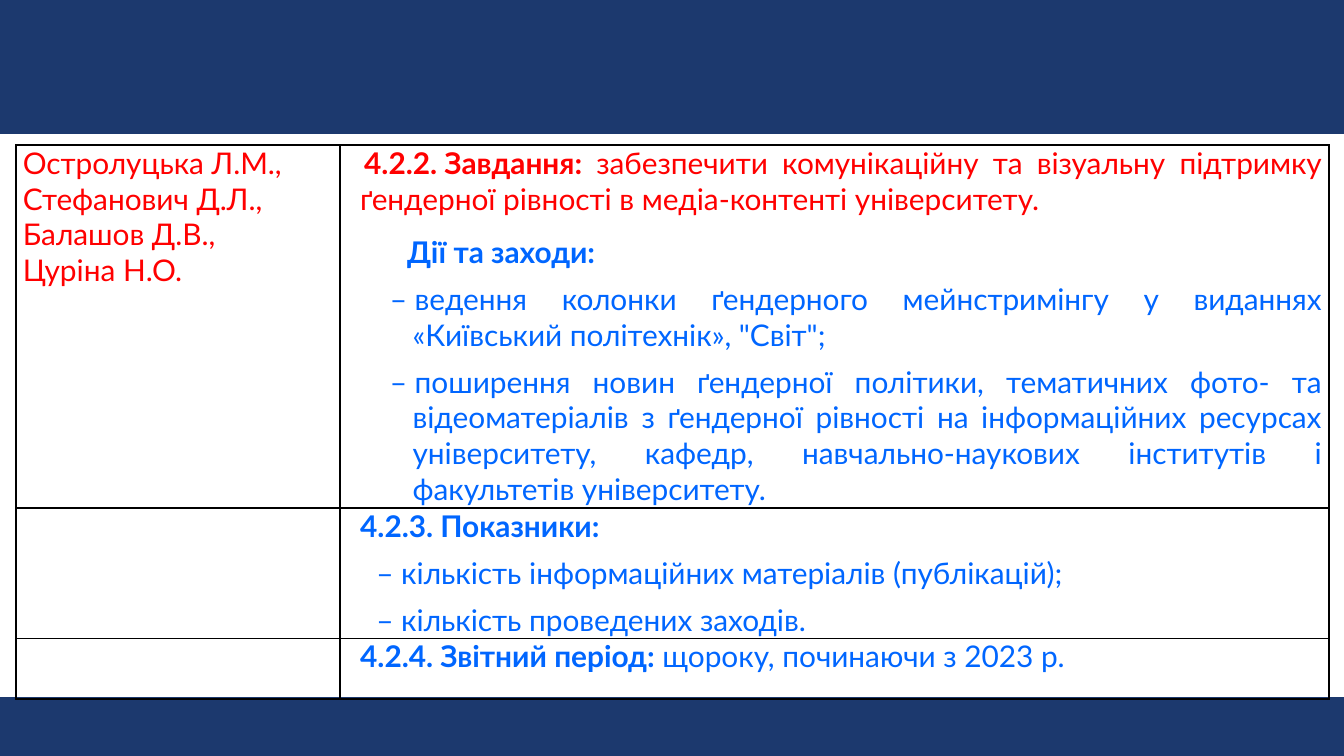
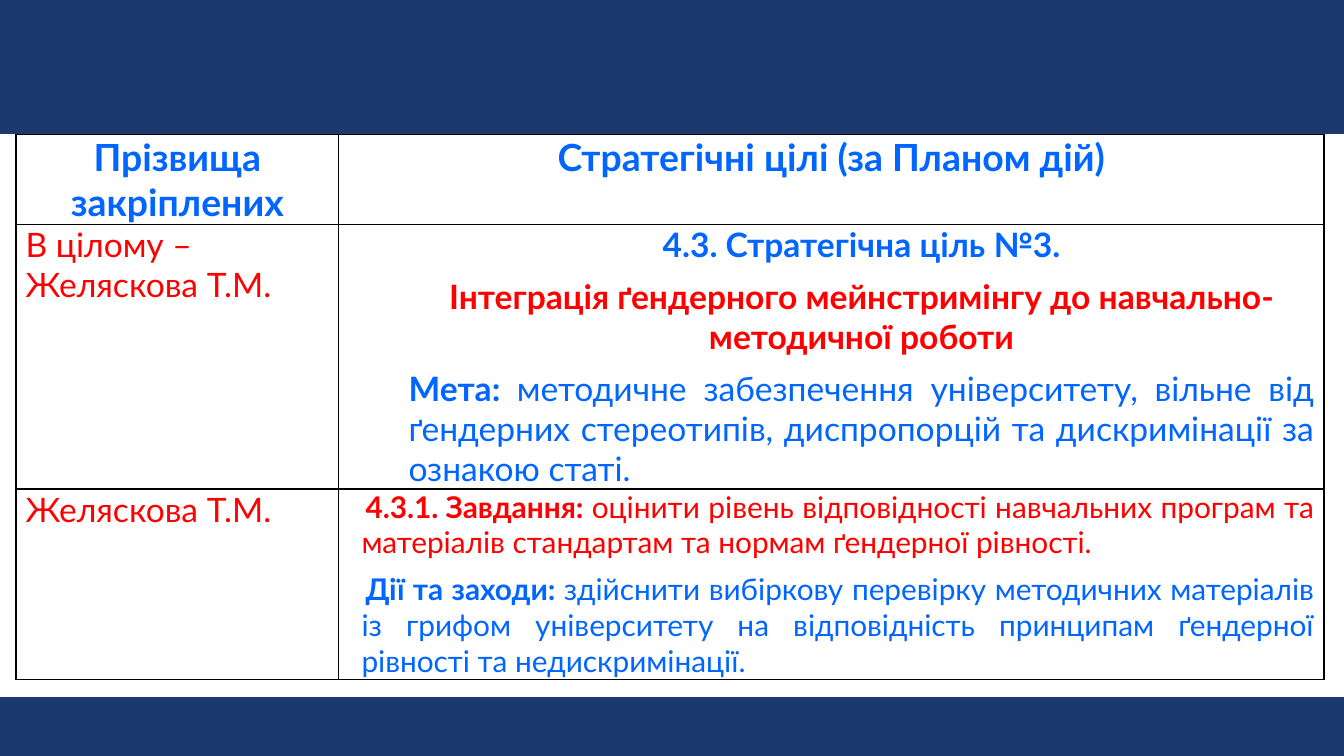
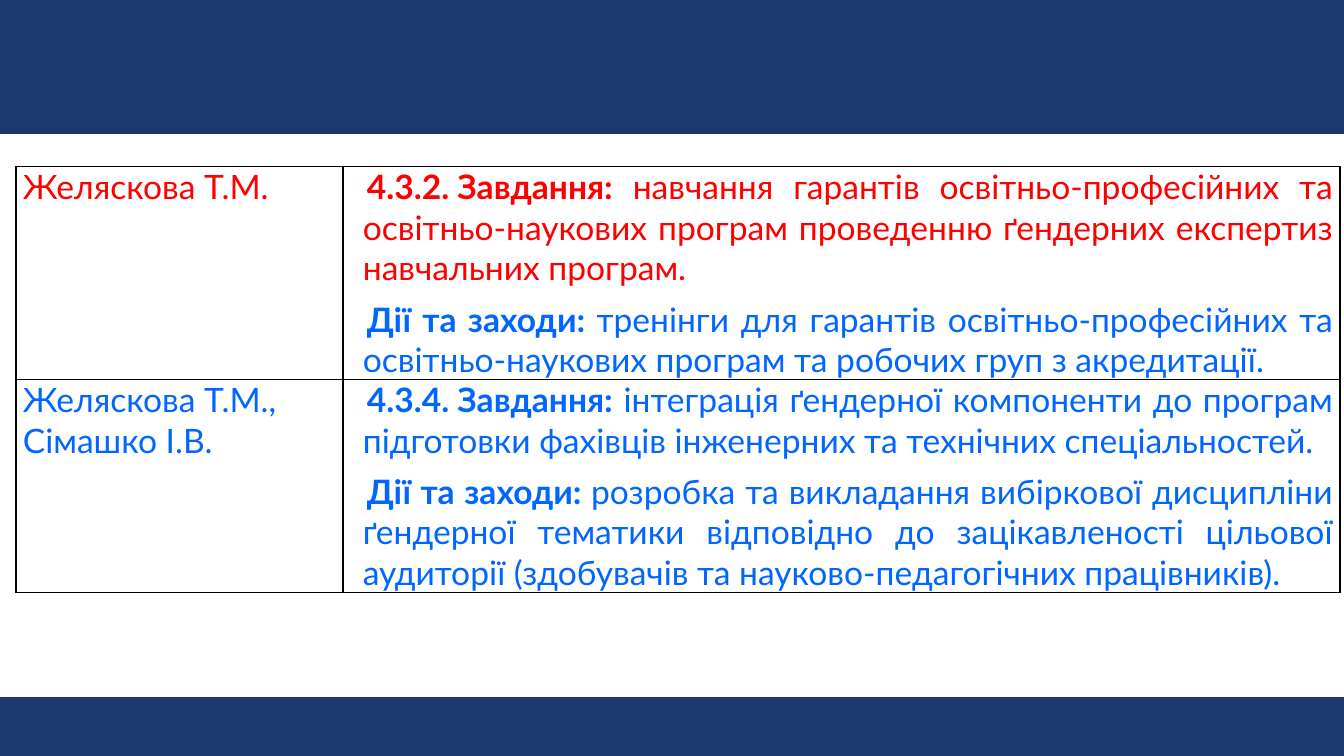
from lxml import etree
from pptx import Presentation
from pptx import util as u
from pptx.dml.color import RGBColor
from pptx.enum import shapes, text
from pptx.oxml import ns

COLORS = {"band": "1C396E", "red": "FF0000", "blue": "0066FF", "border": "000000"}
FONT = "Lato"
FIXED_SPACE = chr(160)
BANDS = [(-0.01, 1), (5.19, 0.43)]
LEFT, CENTER, JUSTIFY = text.PP_ALIGN.LEFT, text.PP_ALIGN.CENTER, text.PP_ALIGN.JUSTIFY

STYLES = {
    "name": {"align": LEFT, "margin": 0, "indent": 0, "before": 0, "after": 0},
    "header": {"align": CENTER, "margin": 0, "indent": 0, "before": 0, "after": 0},
    "goal": {"align": CENTER, "margin": 0.45, "indent": 0, "before": 0, "after": 6},
    "aim": {"align": JUSTIFY, "margin": 0.45, "indent": 0, "before": 0, "after": 6},
    "task": {"align": JUSTIFY, "margin": 0.1, "indent": 0.03, "before": 0, "after": 6},
    "actions": {"align": LEFT, "margin": 0.45, "indent": 0, "before": 3.6, "after": 6},
    "action": {"align": JUSTIFY, "margin": 0.49, "indent": -0.17, "before": 0, "after": 6},
    "heading": {"align": LEFT, "margin": 0.1, "indent": 0, "before": 0, "after": 6},
    "indicator": {"align": LEFT, "margin": 0.49, "indent": -0.27, "before": 0, "after": 6},
    "period": {"align": LEFT, "margin": 0, "indent": 0.1, "before": 0, "after": 6},
}

TABLES = [
    {
        "top": 1.08, "inset": 0.05, "columns": [2.41, 7.36], "rows": [2.7, 0.97, 0.45],
        "cells": [
            [
                [
                    ("name", "red", 16, "", "Остролуцька Л.М., Стефанович Д.Л., Балашов Д.В.,"),
                    ("name", "red", 16, "", "Цуріна Н.О."),
                ],
                [
                    ("task", "red", 16, "4.2.2.~Завдання: ", "забезпечити комунікаційну та візуальну підтримку ґендерної рівності в медіа-контенті університету."),
                    ("actions", "blue", 16, "Дії та заходи:", ""),
                    ("action", "blue", 16, "", "–~ведення колонки ґендерного мейнстримінгу у виданнях «Київський політехнік», \"Світ\";"),
                    ("action", "blue", 16, "", "–~поширення новин ґендерної політики, тематичних фото- та відеоматеріалів з ґендерної рівності на інформаційних ресурсах університету, кафедр, навчально-наукових інститутів і факультетів університету."),
                ],
            ],
            [
                [],
                [
                    ("heading", "blue", 16, "4.2.3. Показники:", ""),
                    ("indicator", "blue", 16, "", "–~кількість інформаційних матеріалів (публікацій);"),
                    ("indicator", "blue", 16, "", "–~кількість проведених заходів.~"),
                ],
            ],
            [
                [],
                [("period", "blue", 16, "4.2.4. Звітний період:", " щороку, починаючи з 2023 р.~")],
            ],
        ],
    },
    {
        "top": 1, "inset": 0.07, "columns": [2.4, 7.33], "rows": [0.67, 1.96, 1.42],
        "cells": [
            [
                [("header", "blue", 20, "Прізвища закріплених", "")],
                [("header", "blue", 20, "Стратегічні цілі (за Планом дій)", "")],
            ],
            [
                [("name", "red", 18, "", "В цілому – Желяскова Т.М.")],
                [
                    ("goal", "blue", 18, "4.3.~Стратегічна ціль №3.", ""),
                    ("goal", "red", 18, "Інтеграція ґендерного мейнстримінгу до навчально-методичної роботи", ""),
                    ("aim", "blue", 18, "Мета: ", "методичне забезпечення університету, вільне від ґендерних стереотипів, диспропорцій та дискримінації за ознакою статі."),
                ],
            ],
            [
                [("name", "red", 18, "", "Желяскова Т.М.")],
                [
                    ("task", "red", 16, "4.3.1.~Завдання: ", "оцінити рівень відповідності навчальних програм та матеріалів стандартам та нормам ґендерної рівності."),
                    ("task", "blue", 16, "Дії та заходи: ", "здійснити вибіркову перевірку методичних матеріалів із грифом університету на відповідність принципам ґендерної рівності та недискримінації."),
                ],
            ],
        ],
    },
    {
        "top": 1.24, "inset": 0.05, "columns": [2.43, 7.42], "rows": [1.58, 1.58],
        "cells": [
            [
                [("name", "red", 18, "", "Желяскова Т.М.")],
                [
                    ("task", "red", 18, "4.3.2.~Завдання:", " навчання гарантів освітньо-професійних та освітньо-наукових програм проведенню ґендерних експертиз навчальних програм."),
                    ("task", "blue", 18, "Дії та заходи: ", "тренінги для гарантів освітньо-професійних та освітньо-наукових програм та робочих груп з акредитації."),
                ],
            ],
            [
                [("name", "blue", 18, "", "Желяскова Т.М., Сімашко І.В.")],
                [
                    ("task", "blue", 18, "4.3.4.~Завдання:", " інтеграція ґендерної компоненти до програм підготовки фахівців інженерних та технічних спеціальностей."),
                    ("task", "blue", 18, "Дії та заходи: ", "розробка та викладання вибіркової дисципліни ґендерної тематики відповідно до зацікавленості цільової аудиторії (здобувачів та науково-педагогічних працівників)."),
                ],
            ],
        ],
    },
]


def style_cell(cell, inset):
    cell.margin_left = cell.margin_right = u.Inches(inset)
    cell.margin_top = cell.margin_bottom = 0
    properties = cell._tc.get_or_add_tcPr()
    for side in ("a:lnL", "a:lnR", "a:lnT", "a:lnB"):
        line = etree.SubElement(properties, ns.qn(side), w=str(u.Pt(1)))
        fill = etree.SubElement(line, ns.qn("a:solidFill"))
        etree.SubElement(fill, ns.qn("a:srgbClr"), val=COLORS["border"])
    cell.fill.background()


def write_paragraph(para, style_name, color, size, bold_text, plain_text):
    style = STYLES[style_name]
    para.alignment = style["align"]
    properties = para._p.get_or_add_pPr()
    properties.set("marL", str(u.Inches(style["margin"])))
    properties.set("indent", str(u.Inches(style["indent"])))
    para.space_before = u.Pt(style["before"])
    para.space_after = u.Pt(style["after"])
    para.font.name = FONT
    para.font.size = u.Pt(size)
    para.font.color.rgb = RGBColor.from_string(COLORS[color])
    mixed = bool(bold_text and plain_text)
    if not mixed:
        para.font.bold = bool(bold_text)
    for content, bold in ((bold_text, True), (plain_text, False)):
        if content:
            span = para.add_run()
            span.text = content.replace("~", FIXED_SPACE)
            if mixed:
                span.font.bold = bold


deck = Presentation()
deck.slide_width = u.Inches(10)
deck.slide_height = deck.slide_width * 9 // 16

for plan in TABLES:
    page = deck.slides.add_slide(deck.slide_layouts[6])
    for top, height in BANDS:
        band = page.shapes.add_shape(
            shapes.MSO_SHAPE.RECTANGLE, u.Inches(-0.02), u.Inches(top), u.Inches(10.02), u.Inches(height))
        band.shadow.inherit = False
        band.fill.solid()
        band.fill.fore_color.rgb = RGBColor.from_string(COLORS["band"])
        band.line.color.rgb = RGBColor.from_string(COLORS["band"])
        band.line.width = u.Pt(0.75)

    table = page.shapes.add_table(
        len(plan["rows"]), len(plan["columns"]), u.Inches(0.12), u.Inches(plan["top"]),
        u.Inches(sum(plan["columns"])), u.Inches(sum(plan["rows"]))).table
    table.first_row = False
    table.horz_banding = False
    for column, width in zip(table.columns, plan["columns"]):
        column.width = u.Inches(width)
    for row, height, contents in zip(table.rows, plan["rows"], plan["cells"]):
        row.height = u.Inches(height)
        for cell, paragraphs in zip(row.cells, contents):
            style_cell(cell, plan["inset"])
            for index, entry in enumerate(paragraphs):
                frame = cell.text_frame
                para = frame.add_paragraph() if index else frame.paragraphs[0]
                write_paragraph(para, *entry)

deck.save("out.pptx")
